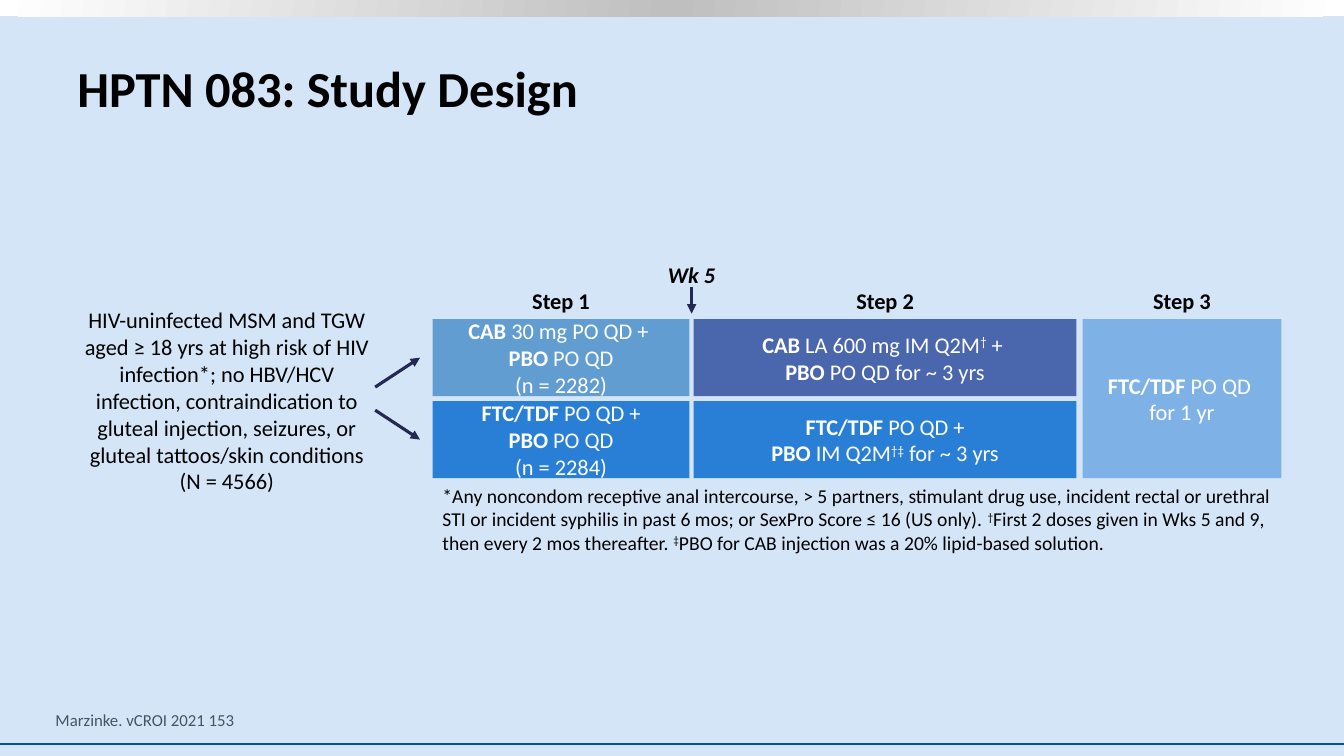
"""Build the HPTN 083 study design slide."""
from copy import deepcopy

from pptx import Presentation
from pptx.dml.color import RGBColor
from pptx.enum.shapes import MSO_CONNECTOR, MSO_SHAPE
from pptx.enum.text import MSO_ANCHOR, PP_ALIGN
from pptx.oxml.ns import qn
from pptx.oxml.xmlchemy import OxmlElement
from pptx.util import Pt

COLORS = {
    "background": "D4E5F7", "black": "000000", "white": "FFFFFF",
    "silver": "BFBFBF", "rule": "00539B", "arrow": "242852",
    "source": "455560", "cab_oral": "629DD1", "cab_injection": "4A66AC",
    "ftc": "297FD5", "open_label": "7EB2E6",
}
RGB = {name: RGBColor.from_string(value) for name, value in COLORS.items()}


def write(frame, paragraphs, size, color="black", align=PP_ALIGN.CENTER,
          anchor=MSO_ANCHOR.TOP, bold=None, italic=None):
    """Fill a frame with paragraphs of (text, style) runs."""
    frame.word_wrap = True
    frame.vertical_anchor = anchor
    for index, runs in enumerate(paragraphs):
        paragraph = frame.add_paragraph() if index else frame.paragraphs[0]
        paragraph.alignment = align
        font = paragraph.font
        font.name, font.size, font.bold, font.italic = "Calibri", Pt(size), bold, italic
        font.color.rgb = RGB[color]
        for text, style in runs:
            if style == "break":
                paragraph.add_line_break()
                continue
            run = paragraph.add_run()
            run.text = text
            if style == "bold":
                run.font.bold = True
            elif style == "super":
                run._r.get_or_add_rPr().set("baseline", "30000")


def connect(start, end, color, width, arrow=True):
    """Draw a straight line, with an arrowhead at its end if wanted."""
    line = slide.shapes.add_connector(
        MSO_CONNECTOR.STRAIGHT, *(Pt(value) for value in (*start, *end)))
    line.line.color.rgb = RGB[color]
    line.line.width = Pt(width)
    if arrow:
        head = OxmlElement("a:tailEnd")
        head.set("type", "triangle")
        line._element.spPr.find(qn("a:ln")).append(head)
    line._element.spPr.append(OxmlElement("a:effectLst"))


prs = Presentation()
prs.slide_width, prs.slide_height = Pt(960), Pt(540)
slide = prs.slides.add_slide(prs.slide_layouts[5])
slide.background.fill.solid()
slide.background.fill.fore_color.rgb = RGB["background"]

top_band = slide.shapes.add_shape(MSO_SHAPE.RECTANGLE, 0, 0, Pt(960), Pt(11.5))
top_band.shadow.inherit = False
top_band.line.fill.background()
top_band.fill.gradient()
top_band.fill.gradient_angle = 170
stop_list = top_band._element.find(".//" + qn("a:gsLst"))
stop_list.insert(1, deepcopy(stop_list[0]))
for stop, position, shade in zip(
        top_band.fill.gradient_stops, (0, 0.5, 1), ("white", "silver", "white")):
    stop.position = position
    stop.color.rgb = RGB[shade]
connect((0, 531.25), (960, 531.25), "rule", 1.5, arrow=False)

title = slide.shapes.title
title.left, title.top, title.width, title.height = Pt(48), Pt(19), Pt(856), Pt(87)
write(title.text_frame, [[("HPTN 083: Study Design", "")]], 36,
      align=PP_ALIGN.LEFT, anchor=MSO_ANCHOR.MIDDLE, bold=True)

STEPS = [(309, 183.5), (495.5, 273.5), (773.25, 142)]
ROWS = [228, 286.5]
ARM_HEIGHT = 55
ARMS = [
    (0, 0, ARM_HEIGHT, "cab_oral",
     [[("CAB ", "bold"), ("30 mg PO QD + ", ""), ("", "break"),
       ("PBO ", "bold"), ("PO QD", "")], [("(n = 2282)", "")]]),
    (0, 1, ARM_HEIGHT, "ftc",
     [[("FTC/TDF ", "bold"), ("PO QD +", "")],
      [("PBO ", "bold"), ("PO QD", "")], [("(n = 2284)", "")]]),
    (1, 0, ARM_HEIGHT, "cab_injection",
     [[("CAB ", "bold"), ("LA 600 mg IM Q2M", ""), ("†", "super"), (" + ", "")],
      [("PBO ", "bold"), ("PO QD for ~ 3 yrs", "")]]),
    (1, 1, ARM_HEIGHT, "ftc",
     [[("FTC/TDF ", "bold"), ("PO QD +", "")],
      [("PBO ", "bold"), ("IM Q2M", ""), ("†‡", "super"), (" for ~ 3 yrs", "")]]),
    (2, 0, ROWS[1] - ROWS[0] + ARM_HEIGHT, "open_label",
     [[("FTC/TDF ", "bold"), ("PO QD ", ""), ("", "break"), ("for 1 yr", "")]]),
]
for step, row, height, color, regimen in ARMS:
    left, width = STEPS[step]
    arm = slide.shapes.add_shape(
        MSO_SHAPE.RECTANGLE, Pt(left), Pt(ROWS[row]), Pt(width), Pt(height))
    arm.shadow.inherit = False
    arm.fill.solid()
    arm.fill.fore_color.rgb = RGB[color]
    arm.line.fill.background()
    write(arm.text_frame, regimen, 16, "white", anchor=MSO_ANCHOR.MIDDLE)

for number, (left, width) in enumerate(STEPS, 1):
    heading = slide.shapes.add_textbox(
        Pt(left + width / 2 - 36), Pt(201.75), Pt(72), Pt(26.5))
    write(heading.text_frame, [[(f"Step {number}", "")]], 16,
          anchor=MSO_ANCHOR.MIDDLE, bold=True)

population = [
    [("HIV-uninfected MSM and TGW aged ≥ 18 yrs at high risk of HIV infection*; "
      "no HBV/HCV infection, contraindication to gluteal injection, seizures, or "
      "gluteal tattoos/skin conditions", "")],
    [("(N = 4566)", "")],
]
footnote = [[
    ("*Any noncondom receptive anal intercourse, > 5 partners, stimulant drug use, "
     "incident rectal or urethral STI or incident syphilis in past 6 mos; or SexPro "
     "Score ≤ 16 (US only). ", ""),
    ("†", "super"),
    ("First 2 doses given in Wks 5 and 9, then every 2 mos thereafter. ", ""),
    ("‡", "super"),
    ("PBO for CAB injection was a 20% lipid-based solution.", ""),
]]
NOTES = [
    ((47.5, 215.25, 229, 143.25), population, 16, {}),
    ((309, 342, 607, 58.25), footnote, 14, {"align": PP_ALIGN.LEFT}),
    ((461.5, 183.25, 65, 26.5), [[("Wk 5", "")]], 16, {"bold": True, "italic": True}),
    ((32.5, 503.25, 618.5, 21.75), [[("Marzinke. vCROI 2021 153", "")]], 12,
     {"color": "source", "align": PP_ALIGN.LEFT, "anchor": MSO_ANCHOR.BOTTOM}),
]
for place, paragraphs, size, options in NOTES:
    note = slide.shapes.add_textbox(*(Pt(value) for value in place))
    write(note.text_frame, paragraphs, size, **options)

for start, end in [((268, 276.5), (300, 255.5)),
                   ((268, 293), (300, 314)),
                   ((494, 205), (494, 224))]:
    connect(start, end, "arrow", 2.25)

prs.save("out.pptx")
